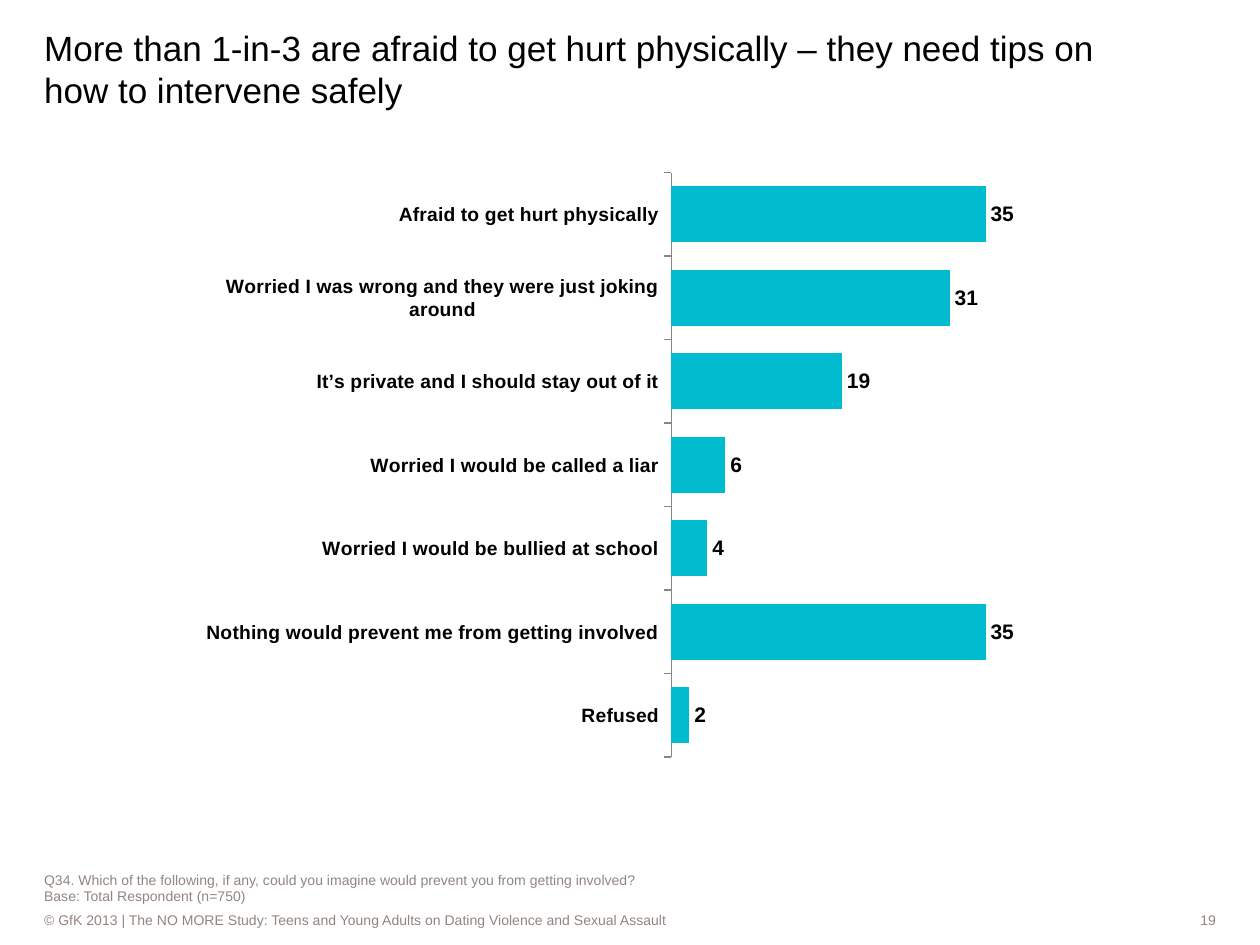
import pptx
import pptx.chart.data
import pptx.dml.color
import pptx.enum.chart
import pptx.enum.shapes
import pptx.enum.text
import pptx.util
from lxml import etree

BLACK = pptx.dml.color.RGBColor(0x00, 0x00, 0x00)
WHITE = pptx.dml.color.RGBColor(0xFF, 0xFF, 0xFF)
GREY = pptx.dml.color.RGBColor(0x92, 0x85, 0x80)
AXIS = pptx.dml.color.RGBColor(0x86, 0x86, 0x86)
TEAL = pptx.dml.color.RGBColor(0x00, 0xBC, 0xCE)
FONT = "Arial"
WIDTH, HEIGHT = 10, 7.5
MARGIN = 0.035 * WIDTH
FOOT_TOP, FOOT_HEIGHT = 7.22, 0.16
CHART = (1.5, 1.27, 6.81, 4.83)
PLOT = (5.33, 1.37, 2.85, 4.64)
ANCHOR = pptx.enum.text.MSO_ANCHOR
ALIGN = pptx.enum.text.PP_ALIGN

ANSWERS = {
    "Afraid to get hurt physically": 35,
    "Worried I was wrong and they were just joking around": 31,
    "It’s private and I should stay out of it": 19,
    "Worried I would be called a liar": 6,
    "Worried I would be bullied at school": 4,
    "Nothing would prevent me from getting involved": 35,
    "Refused": 2,
}


def set_font(font, size, color, bold=False):
    """Apply the slide's typeface with a size, colour and weight."""
    font.name, font.size, font.bold = FONT, pptx.util.Pt(size), bold
    font.color.rgb = color


def place(sp, left, top, width, height):
    """Set a shape's frame in inches."""
    sp.left, sp.top, sp.width, sp.height = map(
        pptx.util.Inches, (left, top, width, height))


def write(sp, text, size, color, anchor, align=ALIGN.LEFT, bottom=0):
    """Fill a shape with plain, unbulleted text."""
    tf = sp.text_frame
    tf.text = text
    tf.word_wrap = True
    tf.auto_size = pptx.enum.text.MSO_AUTO_SIZE.NONE
    tf.vertical_anchor = anchor
    tf.margin_left = tf.margin_right = tf.margin_top = 0
    tf.margin_bottom = pptx.util.Inches(bottom)
    for p in tf.paragraphs:
        p.alignment = align
        p.space_before = pptx.util.Pt(0)
        pPr = p._p.get_or_add_pPr()
        pPr.set("marL", "0")
        pPr.set("indent", "0")
        etree.SubElement(pPr, pptx.oxml.ns.qn("a:buNone"))
        for r in p.runs:
            set_font(r.font, size, color)


def add_footer(s, text, left, width, align):
    """Add one white rectangle with small text on the footer line."""
    sp = s.shapes.add_shape(
        pptx.enum.shapes.MSO_SHAPE.RECTANGLE,
        *map(pptx.util.Inches, (left, FOOT_TOP, width, FOOT_HEIGHT)))
    sp.shadow.inherit = False
    sp.fill.solid()
    sp.fill.fore_color.rgb = WHITE
    sp.line.fill.background()
    write(sp, text, 8, GREY, ANCHOR.MIDDLE, align)


def set_plot_area(chart, frame, plot):
    """Fix the inner plot area, given in slide inches, within the chart frame."""
    left, top, width, height = frame
    x, y, w, h = plot
    plot_area = chart._chartSpace.chart.plotArea
    for old in plot_area.findall(pptx.oxml.ns.qn("c:layout")):
        plot_area.remove(old)
    layout = etree.Element(pptx.oxml.ns.qn("c:layout"))
    manual = etree.SubElement(layout, pptx.oxml.ns.qn("c:manualLayout"))
    values = {"layoutTarget": "inner", "xMode": "edge", "yMode": "edge",
              "x": (x - left) / width, "y": (y - top) / height,
              "w": w / width, "h": h / height}
    for tag, value in values.items():
        etree.SubElement(manual, pptx.oxml.ns.qn("c:" + tag), val=str(value))
    plot_area.insert(0, layout)


def add_bar_chart(s, answers):
    """Add the horizontal bar chart of answers."""
    data = pptx.chart.data.CategoryChartData(number_format="0")
    data.categories = list(answers)
    data.add_series("Series 1", list(answers.values()))
    chart = s.shapes.add_chart(
        pptx.enum.chart.XL_CHART_TYPE.BAR_CLUSTERED,
        *map(pptx.util.Inches, CHART), data).chart
    chart.has_legend = chart.has_title = False
    set_font(chart.font, 18, BLACK)
    set_plot_area(chart, CHART, PLOT)

    axis = chart.category_axis
    axis.reverse_order = True
    axis.major_tick_mark = pptx.enum.chart.XL_TICK_MARK.OUTSIDE
    axis.format.line.color.rgb = AXIS
    axis.format.line.width = pptx.util.Pt(0.75)
    set_font(axis.tick_labels.font, 11, BLACK, True)
    scale = chart.value_axis
    scale.minimum_scale, scale.maximum_scale = 0, 40
    scale.has_major_gridlines = scale.visible = False

    plot = chart.plots[0]
    plot.gap_width, plot.vary_by_categories = 50, False
    series = plot.series[0]
    series.format.fill.solid()
    series.format.fill.fore_color.rgb = TEAL
    labels = series.data_labels
    labels.show_value = True
    labels.number_format, labels.number_format_is_linked = "0", False
    labels.position = pptx.enum.chart.XL_LABEL_POSITION.OUTSIDE_END
    set_font(labels.font, 12, BLACK, True)


def main():
    """Build the slide and save it."""
    prs = pptx.Presentation()
    prs.slide_width = pptx.util.Inches(WIDTH)
    prs.slide_height = pptx.util.Inches(HEIGHT)
    s = prs.slides.add_slide(prs.slide_layouts[1])

    add_footer(s, "© GfK 2013 | The NO MORE Study: Teens and Young Adults on "
               "Dating Violence and Sexual Assault", MARGIN, 7.72, ALIGN.LEFT)
    add_footer(s, "19", WIDTH - MARGIN - 1.42, 1.42, ALIGN.RIGHT)

    title, note = s.shapes.title, s.placeholders[1]
    place(title, MARGIN, 0.25, 8.48, 0.63)
    write(title, "More than 1-in-3 are afraid to get hurt physically – they "
          "need tips on how to intervene safely", 20, BLACK, ANCHOR.BOTTOM)
    place(note, MARGIN, 6.91, WIDTH - 2 * MARGIN, 0.31)
    write(note, "Q34. Which of the following, if any, could you imagine would "
          "prevent you from getting involved?\nBase: Total Respondent (n=750)",
          8, GREY, ANCHOR.BOTTOM, bottom=0.04)

    add_bar_chart(s, ANSWERS)
    prs.save("out.pptx")


if __name__ == "__main__":
    main()
